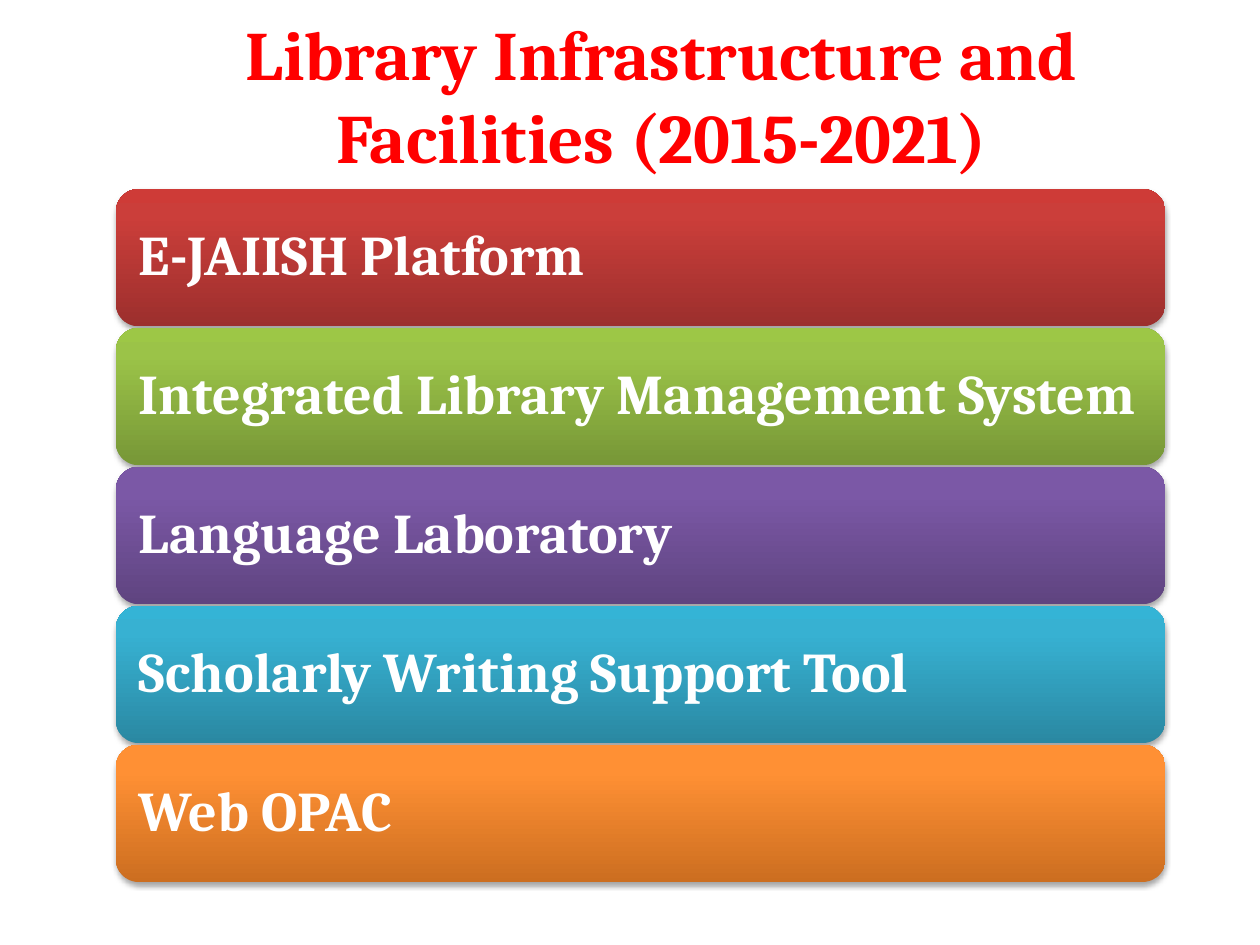
"""Build the library infrastructure and facilities slide."""
from copy import deepcopy

from lxml import etree
from pptx import Presentation
from pptx.dml.color import RGBColor
from pptx.enum.shapes import MSO_SHAPE
from pptx.enum.text import MSO_ANCHOR, PP_ALIGN
from pptx.oxml import parse_xml
from pptx.oxml.ns import qn
from pptx.util import Inches, Pt

RED = RGBColor(0xFF, 0x00, 0x00)
WHITE = RGBColor(0xFF, 0xFF, 0xFF)
BARS = [
    ("E-JAIISH Platform", ("9C2F2D", "CB3E3A", "CE3B37")),
    ("Integrated Library Management System", ("779737", "9BC348", "9DC746")),
    ("Language Laboratory", ("5F4480", "7B58A6", "7C57A8")),
    ("Scholarly Writing Support Tool", ("2A88A2", "37B1D2", "34B4D6")),
    ("Web OPAC", ("CC6E20", "FF9034", "FF9136")),
]
STOPS = (0, 0.8, 1)
INSETS = ("margin_left", "margin_top", "margin_right", "margin_bottom")
SHADOW = (
    '<a:outerShdw xmlns:a="http://schemas.openxmlformats.org/drawingml/2006/main"'
    ' blurRad="40000" dist="23000" dir="5400000" rotWithShape="0">'
    '<a:srgbClr val="000000"><a:alpha val="35000"/></a:srgbClr></a:outerShdw>'
)


def write(s, text, align, size, color):
    tf = s.text_frame
    tf.word_wrap = True
    tf.vertical_anchor = MSO_ANCHOR.MIDDLE
    p = tf.paragraphs[0]
    p.alignment = align
    r = p.add_run()
    r.text = text
    style = {"name": "Cambria", "size": Pt(size), "bold": True}
    for key, value in style.items():
        setattr(r.font, key, value)
    r.font.color.rgb = color
    return tf


prs = Presentation()
prs.slide_width, prs.slide_height = Inches(10), Inches(7.5)
slide = prs.slides.add_slide(prs.slide_layouts[6])

for i, (text, colors) in enumerate(BARS):
    s = slide.shapes.add_shape(
        MSO_SHAPE.ROUNDED_RECTANGLE,
        Inches(0.92), Inches(1.5 + i * 1.1025), Inches(8.33), Inches(1.09),
    )
    s.line.fill.background()
    s.fill.gradient()
    s.fill.gradient_angle = 90
    stops = s.fill._fill._gradFill.find(qn("a:gsLst"))
    stops.append(deepcopy(stops[-1]))
    for stop, position, color in zip(s.fill.gradient_stops, STOPS, colors):
        stop.position = position
        stop.color.rgb = RGBColor.from_string(color)
    s.shadow.inherit = False
    s._element.spPr.find(qn("a:effectLst")).append(parse_xml(SHADOW))
    tf = write(s, text, PP_ALIGN.LEFT, 32, WHITE)
    tf.paragraphs[0].line_spacing = 0.9
    for inset in INSETS:
        setattr(tf, inset, Inches(0.13))

title = slide.shapes.add_textbox(Inches(1), Inches(0.25), Inches(8.5), Inches(1))
write(title, "Library Infrastructure and Facilities (2015-2021)", PP_ALIGN.CENTER, 39.6, RED)

prs.save("out.pptx")
